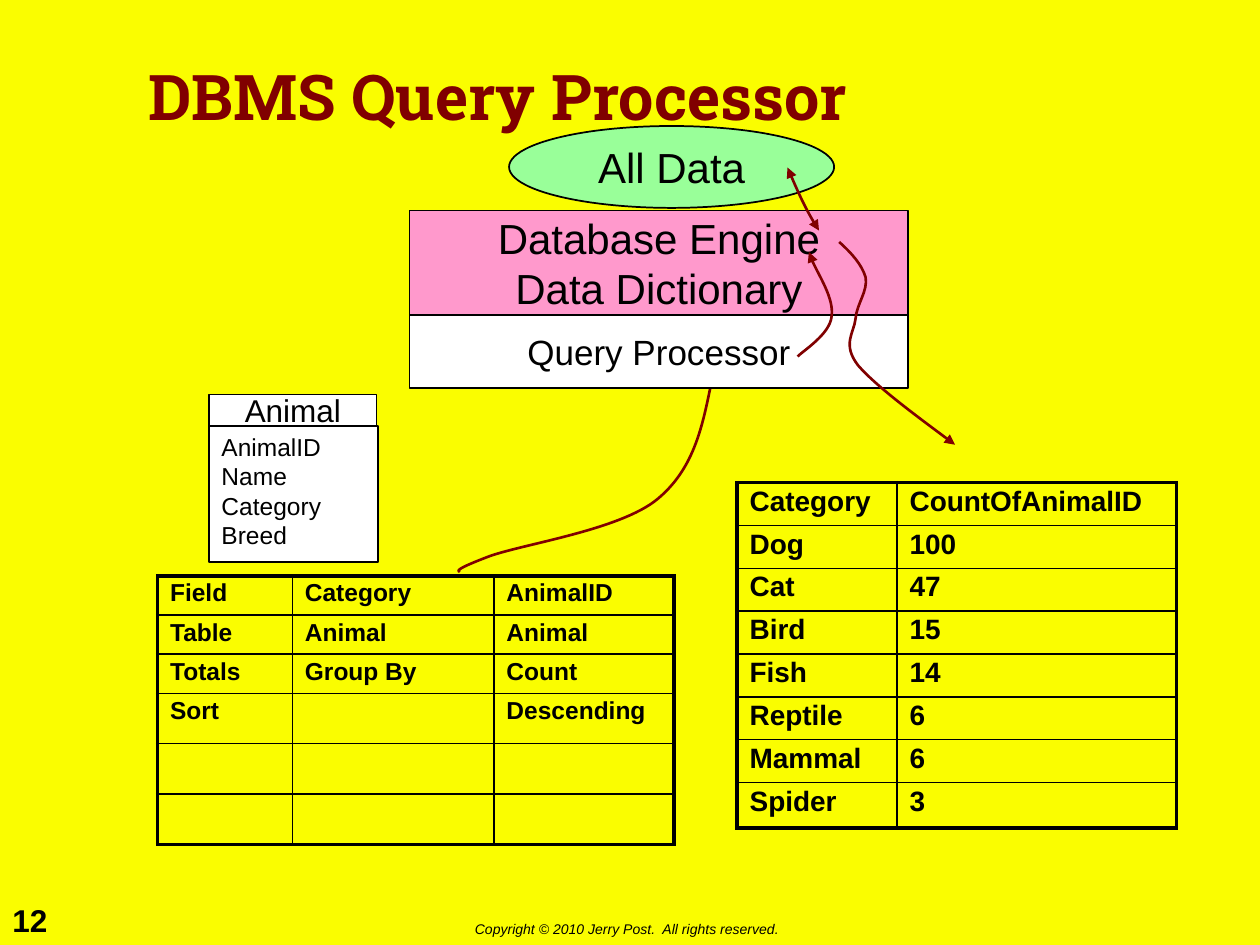
from lxml import etree
from pptx import Presentation
from pptx.dml.color import RGBColor
from pptx.enum.shapes import MSO_SHAPE
from pptx.enum.text import MSO_ANCHOR, PP_ALIGN
from pptx.oxml.ns import qn
from pptx.util import Inches, Pt

RECTANGLE, OVAL = MSO_SHAPE.RECTANGLE, MSO_SHAPE.OVAL
TOP, MIDDLE = MSO_ANCHOR.TOP, MSO_ANCHOR.MIDDLE
LEFT, CENTER = PP_ALIGN.LEFT, PP_ALIGN.CENTER
BLACK, WHITE, MAROON = "000000", "FFFFFF", "800000"
YELLOW, GREEN, PINK = "FAFD00", "99FF99", "FF99CC"


def color(hex_code):
    return RGBColor.from_string(hex_code)


def write(frame, text, size=14, font="Arial", ink=BLACK, bold=False, italic=False,
          align=LEFT, anchor=TOP, spacing=None, wrap=True):
    frame.word_wrap = wrap
    frame.vertical_anchor = anchor
    for index, line in enumerate(text.split("\n")):
        paragraph = frame.add_paragraph() if index else frame.paragraphs[0]
        paragraph.alignment = align
        if spacing:
            paragraph.line_spacing = spacing
        run = paragraph.add_run()
        run.text = line
        run.font.name = font
        run.font.size = Pt(size)
        run.font.bold = bold
        run.font.italic = italic
        run.font.color.rgb = color(ink)


class SlideBuilder:
    def __init__(self, slide, outline=1, frame=2.25, curve=1.5):
        self.slide = slide
        self.outline = outline
        self.frame = frame
        self.curve_width = curve
        slide.background.fill.solid()
        slide.background.fill.fore_color.rgb = color(YELLOW)

    def label(self, text, box, **style):
        holder = self.slide.shapes.add_textbox(*map(Inches, box))
        write(holder.text_frame, text, **style)

    def block(self, kind, text, box, fill, **style):
        block = self.slide.shapes.add_shape(kind, *map(Inches, box))
        block.shadow.inherit = False
        block.fill.solid()
        block.fill.fore_color.rgb = color(fill)
        block.line.color.rgb = color(BLACK)
        block.line.width = Pt(self.outline)
        write(block.text_frame, text, **style)

    def curve(self, points, both_ends=False):
        corners = [(Inches(x), Inches(y)) for x, y in points]
        builder = self.slide.shapes.build_freeform(*corners[0])
        builder.add_line_segments(corners[1:], close=False)
        curve = builder.convert_to_shape()
        curve.shadow.inherit = False
        curve.fill.background()
        curve.line.color.rgb = color(MAROON)
        curve.line.width = Pt(self.curve_width)

        segments = list(curve.element.iter(qn("a:lnTo")))
        outline = segments[0].getparent()
        for start in range(0, len(segments), 3):
            bezier = etree.SubElement(outline, qn("a:cubicBezTo"))
            for segment in segments[start:start + 3]:
                bezier.append(segment[0])
                outline.remove(segment)

        stroke = curve.element.spPr.find(qn("a:ln"))
        for end in ("a:headEnd", "a:tailEnd") if both_ends else ("a:tailEnd",):
            etree.SubElement(stroke, qn(end), type="triangle")

    def border(self, cell, side, width):
        properties = cell._tc.get_or_add_tcPr()
        edge = etree.SubElement(properties, qn(f"a:ln{side}"), w=str(Pt(width)))
        fill = etree.SubElement(edge, qn("a:solidFill"))
        etree.SubElement(fill, qn("a:srgbClr"), val=BLACK)

    def grid(self, rows, corner, widths, heights, size):
        shape = self.slide.shapes.add_table(
            len(rows), len(widths), *map(Inches, (*corner, sum(widths), sum(heights))))
        table = shape.table
        table.first_row = False
        table.horz_banding = False
        for column, width in zip(table.columns, widths):
            column.width = Inches(width)
        for row, height in zip(table.rows, heights):
            row.height = Inches(height)
        for r, values in enumerate(rows):
            for c, value in enumerate(values):
                cell = table.cell(r, c)
                on_frame = {"L": c == 0, "R": c == len(widths) - 1,
                            "T": r == 0, "B": r == len(rows) - 1}
                for side, outer in on_frame.items():
                    self.border(cell, side, self.frame if outer else self.outline)
                cell.fill.background()
                write(cell.text_frame, value, size=size, bold=True, spacing=0.9)


def main():
    deck = Presentation()
    deck.slide_width, deck.slide_height = Inches(10), Inches(7.5)
    page = SlideBuilder(deck.slides.add_slide(deck.slide_layouts[6]))

    page.label("12", (0, 7.1, 0.5, 0.4), size=18, bold=True, wrap=False)
    page.label("Copyright © 2010 Jerry Post.  All rights reserved.",
               (3.67, 7.26, 2.65, 0.24), size=8, italic=True, wrap=False)

    query_design = [
        ("Field", "Category", "AnimalID"),
        ("Table", "Animal", "Animal"),
        ("Totals", "Group By", "Count"),
        ("Sort", "", "Descending"),
        ("", "", ""),
        ("", "", ""),
    ]
    page.grid(query_design, (1.25, 4.57), (1.07, 1.6, 1.43),
              [0.31] * 3 + [0.33] * 3, size=14)

    page.block(RECTANGLE, "AnimalID\nName\nCategory\nBreed",
               (1.66, 3.38, 1.34, 1.08), WHITE)
    page.label("DBMS Query Processor", (1.08, 0.17, 7.83, 1.25), size=36,
               font="Roboto Slab", ink=MAROON, bold=True, anchor=MIDDLE, spacing=0.9)
    page.curve([(3.65, 4.54), (3.63, 4.53), (3.61, 4.52), (3.87, 4.42),
                (4.13, 4.32), (4.92, 4.21), (5.22, 3.96),
                (5.52, 3.71), (5.59, 3.31), (5.67, 2.92)])

    layers = [
        (RECTANGLE, "Animal", (1.66, 3.13, 1.33, 0.25), WHITE, 18),
        (OVAL, "All Data", (4.04, 1, 2.58, 0.65), GREEN, 24),
        (RECTANGLE, "Database Engine\nData Dictionary", (3.25, 1.67, 3.96, 0.83), PINK, 24),
        (RECTANGLE, "Query Processor", (3.25, 2.5, 3.96, 0.58), WHITE, 20),
    ]
    for kind, name, box, fill, size in layers:
        page.block(kind, name, box, fill, size=size, align=CENTER, anchor=MIDDLE)

    page.curve([(6.33, 2.83), (6.38, 2.78), (6.59, 2.65), (6.6, 2.51),
                (6.62, 2.37), (6.45, 2.11), (6.42, 2)])
    page.curve([(6.25, 1.33), (6.33, 1.52), (6.42, 1.71), (6.5, 1.83)], both_ends=True)
    page.curve([(6.66, 1.92), (6.76, 2.01), (6.84, 2.1), (6.87, 2.2),
                (6.89, 2.31), (6.8, 2.41), (6.79, 2.53),
                (6.78, 2.64), (6.68, 2.73), (6.81, 2.9),
                (6.95, 3.06), (7.27, 3.3), (7.58, 3.53)])

    animal_counts = [
        ("Category", "CountOfAnimalID"),
        ("Dog", "100"),
        ("Cat", "47"),
        ("Bird", "15"),
        ("Fish", "14"),
        ("Reptile", "6"),
        ("Mammal", "6"),
        ("Spider", "3"),
    ]
    page.grid(animal_counts, (5.85, 3.83), (1.27, 2.22), [0.32] * 7 + [0.36], size=16)

    deck.save("out.pptx")


if __name__ == "__main__":
    main()
